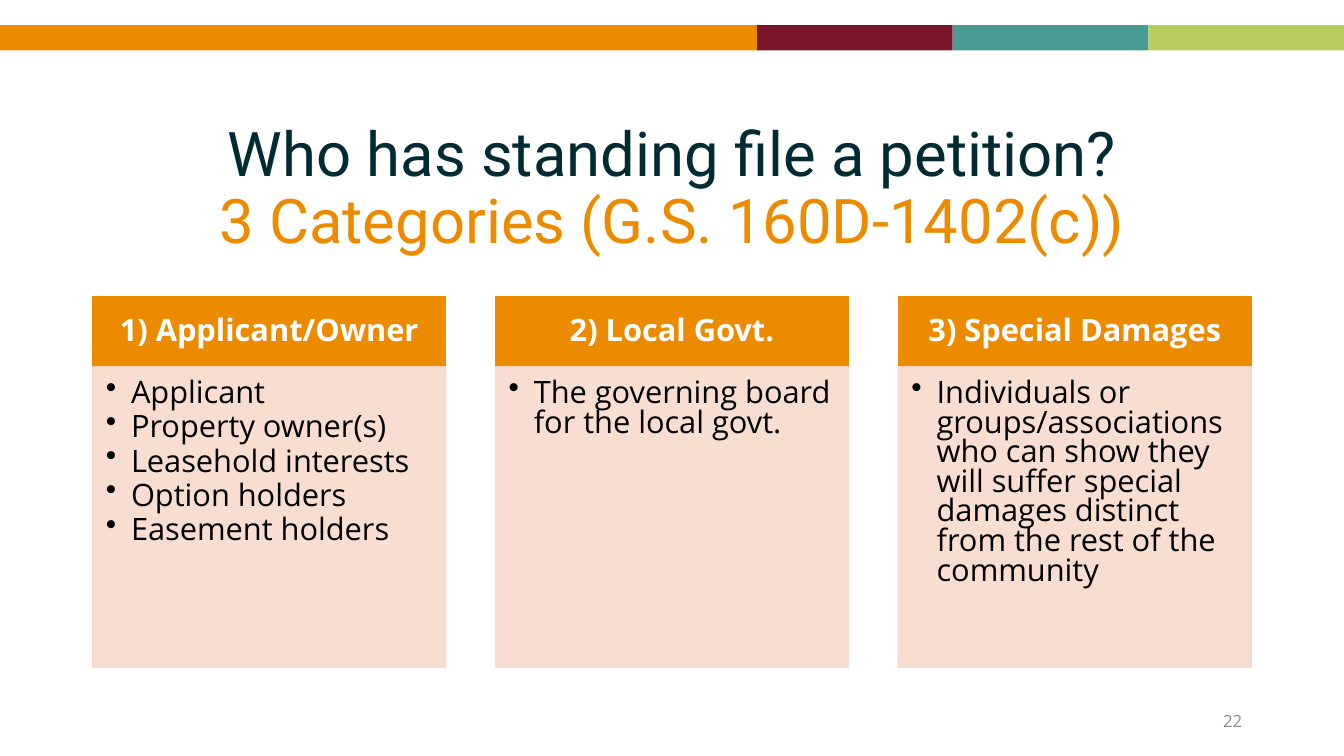
from dataclasses import dataclass

from lxml import etree
from pptx import Presentation
from pptx.dml.color import RGBColor
from pptx.enum.shapes import MSO_SHAPE
from pptx.enum.text import MSO_ANCHOR, PP_ALIGN
from pptx.oxml.ns import qn
from pptx.util import Inches, Pt

RECTANGLE = MSO_SHAPE.RECTANGLE
TOP, MIDDLE = MSO_ANCHOR.TOP, MSO_ANCHOR.MIDDLE
LEFT, CENTER, RIGHT = PP_ALIGN.LEFT, PP_ALIGN.CENTER, PP_ALIGN.RIGHT


@dataclass(frozen=True)
class Theme:
    orange: str = "ED8B00"
    maroon: str = "79162A"
    teal: str = "499C94"
    lime: str = "B8CD5E"
    peach: str = "F8DACC"
    ink: str = "012B32"
    black: str = "000000"
    white: str = "FFFFFF"
    gray: str = "8C8C8C"
    heading_font: str = "Roboto"
    body_font: str = "Open Sans"
    title_size: int = 44
    body_size: int = 22
    number_size: int = 12


THEME = Theme()
SLIDE_WIDTH, SLIDE_HEIGHT = 13.33, 7.5
DEFAULT_INSETS = (0.1, 0.05, 0.1, 0.05)

BAND_TOP, BAND_HEIGHT = 0.25, 0.25
BAND_PARTS = [(7.51, THEME.orange), (1.94, THEME.maroon),
              (1.94, THEME.teal), (1.94, THEME.lime)]

COLUMNS_LEFT, COLUMNS_RIGHT, COLUMN_WIDTH = 0.92, 12.41, 3.5
HEADER_TOP, HEADER_HEIGHT = 2.94, 0.69
BODY_TOP, BODY_HEIGHT = 3.64, 2.98
CATEGORIES = [
    ("1) Applicant/Owner", ["Applicant", "Property owner(s)", "Leasehold interests",
                            "Option holders", "Easement holders"]),
    ("2) Local Govt.", ["The governing board for the local govt."]),
    ("3) Special Damages", ["Individuals or groups/associations who can show they will "
                            "suffer special damages distinct from the rest of the community"]),
]


def add_text(paragraph, text, *, size, color, font=THEME.body_font, bold=False,
             align=LEFT, line_spacing=1.0, space_after=0):
    """Append a formatted run and set the format of its paragraph."""
    paragraph.alignment = align
    paragraph.line_spacing = line_spacing
    paragraph.space_before = Pt(0)
    paragraph.space_after = Pt(space_after)
    run = paragraph.add_run()
    run.text = text
    run.font.name = font
    run.font.size = Pt(size)
    run.font.bold = bold
    run.font.color.rgb = RGBColor.from_string(color)


def add_bullet(paragraph, indent):
    properties = paragraph._p.get_or_add_pPr()
    properties.set("marL", str(Inches(indent)))
    properties.set("indent", str(-Inches(indent)))
    etree.SubElement(properties, qn("a:buChar")).set("char", "•")


def set_opacity(shape, percent):
    """Make both the fill and the outline of a shape partly transparent."""
    for color in shape._element.spPr.iter(qn("a:srgbClr")):
        etree.SubElement(color, qn("a:alpha")).set("val", str(percent * 1000))


def set_frame(shape, insets, anchor):
    frame = shape.text_frame
    frame.word_wrap = True
    frame.vertical_anchor = anchor
    (frame.margin_left, frame.margin_top,
     frame.margin_right, frame.margin_bottom) = map(Inches, insets)
    return frame


class SlideBuilder:
    def __init__(self, presentation, theme):
        self.theme = theme
        self.slide = presentation.slides.add_slide(presentation.slide_layouts[6])

    def rectangle(self, left, top, width, height, color, outlined=False):
        shape = self.slide.shapes.add_shape(
            RECTANGLE, Inches(left), Inches(top), Inches(width), Inches(height))
        shape.shadow.inherit = False
        shape.fill.solid()
        shape.fill.fore_color.rgb = RGBColor.from_string(color)
        if outlined:
            shape.line.color.rgb = RGBColor.from_string(color)
            shape.line.width = Pt(1)
        else:
            shape.line.fill.background()
        return shape

    def text_box(self, left, top, width, height):
        """Add a text box and return its first paragraph."""
        shape = self.slide.shapes.add_textbox(
            Inches(left), Inches(top), Inches(width), Inches(height))
        return set_frame(shape, DEFAULT_INSETS, MIDDLE).paragraphs[0]

    def color_band(self):
        left = 0
        for width, color in BAND_PARTS:
            self.rectangle(left, BAND_TOP, width, BAND_HEIGHT, color)
            left += width

    def title(self, question, answer):
        theme = self.theme
        paragraph = self.text_box(0.92, 1.16, 11.5, 1.45)
        style = dict(size=theme.title_size, font=theme.heading_font,
                     align=CENTER, line_spacing=0.9)
        add_text(paragraph, question, color=theme.ink, **style)
        paragraph.add_line_break()
        add_text(paragraph, answer, color=theme.orange, **style)

    def category(self, left, heading, items):
        theme = self.theme
        header = self.rectangle(left, HEADER_TOP, COLUMN_WIDTH, HEADER_HEIGHT,
                                theme.orange, outlined=True)
        frame = set_frame(header, (0.17, 0.1, 0.17, 0.1), MIDDLE)
        add_text(frame.paragraphs[0], heading, size=theme.body_size, color=theme.white,
                 bold=True, align=CENTER, line_spacing=0.9)

        body = self.rectangle(left, BODY_TOP, COLUMN_WIDTH, BODY_HEIGHT,
                              theme.peach, outlined=True)
        set_opacity(body, 90)
        frame = set_frame(body, (0.13, 0.13, 0.17, 0.19), TOP)
        for index, item in enumerate(items):
            paragraph = frame.add_paragraph() if index else frame.paragraphs[0]
            add_bullet(paragraph, 0.25)
            add_text(paragraph, item, size=theme.body_size, color=theme.black,
                     line_spacing=0.8, space_after=3.3)

    def page_number(self, number):
        paragraph = self.text_box(9.42, 6.95, 3, 0.4)
        add_text(paragraph, str(number), size=self.theme.number_size,
                 color=self.theme.gray, align=RIGHT)


def main():
    presentation = Presentation()
    presentation.slide_width = Inches(SLIDE_WIDTH)
    presentation.slide_height = Inches(SLIDE_HEIGHT)

    builder = SlideBuilder(presentation, THEME)
    builder.color_band()
    builder.title("Who has standing file a petition?", "3 Categories (G.S. 160D-1402(c))")
    pitch = (COLUMNS_RIGHT - COLUMNS_LEFT - COLUMN_WIDTH) / (len(CATEGORIES) - 1)
    for index, (heading, items) in enumerate(CATEGORIES):
        builder.category(COLUMNS_LEFT + index * pitch, heading, items)
    builder.page_number(22)

    presentation.save("out.pptx")


if __name__ == "__main__":
    main()
